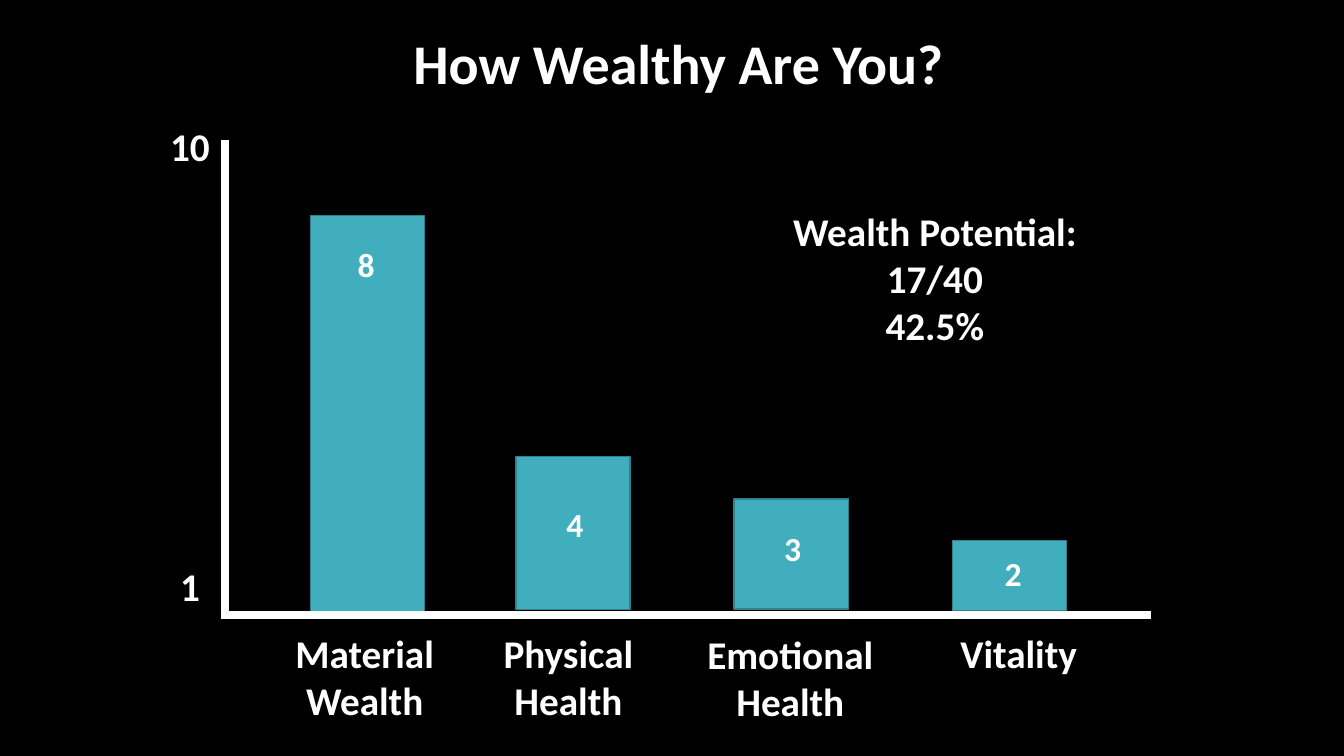
"""Build the "How Wealthy Are You?" slide with a hand-drawn bar diagram."""
from dataclasses import dataclass

from lxml import etree
from pptx import Presentation
from pptx import util as u
from pptx.dml.color import RGBColor
from pptx.enum import shapes, text
from pptx.oxml.ns import qn
from pptx.slide import Slide

COLORS = {"background": "000000", "ink": "FFFFFF", "bar": "41AEBD", "bar_edge": "30818C"}
FONT = "Calibri"
BAR_WIDTH = 81.5
CENTER = text.PP_ALIGN.CENTER
LEFT = text.PP_ALIGN.LEFT


@dataclass(frozen=True)
class Label:
    lines: tuple[str, ...]
    left: float
    top: float
    width: float
    height: float
    size: float = 28
    align: text.PP_ALIGN = CENTER
    wrap: bool = False


@dataclass(frozen=True)
class Bar:
    left: float
    top: float
    height: float
    value: Label
    category: Label


@dataclass(frozen=True)
class Axis:
    start: tuple[float, float]
    end: tuple[float, float]


def value_label(value: str, left: float, top: float) -> Label:
    """Describe the number written inside a bar."""
    return Label((value,), left, top, 27, 36, 24, LEFT)


BARS = (
    Bar(221.6, 154, 286, value_label("8", 248.3, 170.6),
        Label(("Material", "Wealth"), 202.5, 445.8, 116, 75)),
    Bar(368.5, 326.2, 109.4, value_label("4", 397.5, 356.4),
        Label(("Physical", "Health"), 348.4, 446, 115.2, 75)),
    Bar(524.4, 356.4, 78.5, value_label("3", 553, 373.7),
        Label(("Emotional", "Health"), 494, 446.4, 141, 75)),
    Bar(680.2, 386, 50.4, value_label("2", 710.5, 391.7),
        Label(("Vitality",), 675.4, 445.7, 104.4, 41)),
)
AXES = (
    Axis((160.6, 100), (160.6, 440)),
    Axis((822.2, 439.4), (157.7, 439.4)),
)
LABELS = (
    Label(("How Wealthy Are You?",), 54.7, 16.6, 859.7, 55.4, 40, wrap=True),
    Label(("Wealth Potential:", "17/40", "42.5%"), 553.7, 144.7, 228.2, 108.7),
    Label(("1",), 121.7, 398.2, 28.8, 41, align=LEFT),
    Label(("10",), 114.5, 84.2, 43.2, 41, align=LEFT),
)


def color(name: str) -> RGBColor:
    """Look up a named colour."""
    return RGBColor.from_string(COLORS[name])


def draw_label(slide: Slide, label: Label) -> None:
    """Add a text box with one bold paragraph per line."""
    box = slide.shapes.add_textbox(
        u.Pt(label.left), u.Pt(label.top), u.Pt(label.width), u.Pt(label.height))
    frame = box.text_frame
    frame.word_wrap = label.wrap
    frame.auto_size = text.MSO_AUTO_SIZE.SHAPE_TO_FIT_TEXT
    for index, line in enumerate(label.lines):
        paragraph = frame.add_paragraph() if index else frame.paragraphs[0]
        paragraph.alignment = label.align
        run = paragraph.add_run()
        run.text = line
        run.font.name = FONT
        run.font.size = u.Pt(label.size)
        run.font.bold = True
        run.font.color.rgb = color("ink")


def draw_bar(slide: Slide, bar: Bar) -> None:
    """Add the rectangle of one bar."""
    shape = slide.shapes.add_shape(
        shapes.MSO_SHAPE.RECTANGLE,
        u.Pt(bar.left), u.Pt(bar.top), u.Pt(BAR_WIDTH), u.Pt(bar.height))
    shape.shadow.inherit = False
    shape.fill.solid()
    shape.fill.fore_color.rgb = color("bar")
    shape.line.color.rgb = color("bar_edge")
    shape.line.width = u.Pt(1)


def draw_axis(slide: Slide, axis: Axis) -> None:
    """Add one thick axis line."""
    connector = slide.shapes.add_connector(
        shapes.MSO_CONNECTOR.STRAIGHT,
        *(u.Pt(length) for length in axis.start + axis.end))
    connector.line.color.rgb = color("ink")
    connector.line.width = u.Pt(6)
    etree.SubElement(connector._element.spPr, qn("a:effectLst"))


def main() -> None:
    """Build and save the presentation."""
    presentation = Presentation()
    presentation.slide_width = u.Pt(960)
    presentation.slide_height = u.Pt(540)
    slide = presentation.slides.add_slide(presentation.slide_layouts[6])
    slide.background.fill.solid()
    slide.background.fill.fore_color.rgb = color("background")

    for bar in BARS:
        draw_bar(slide, bar)
    for axis in AXES:
        draw_axis(slide, axis)
    for bar in BARS:
        draw_label(slide, bar.value)
        draw_label(slide, bar.category)
    for label in LABELS:
        draw_label(slide, label)

    presentation.save("out.pptx")


if __name__ == "__main__":
    main()
